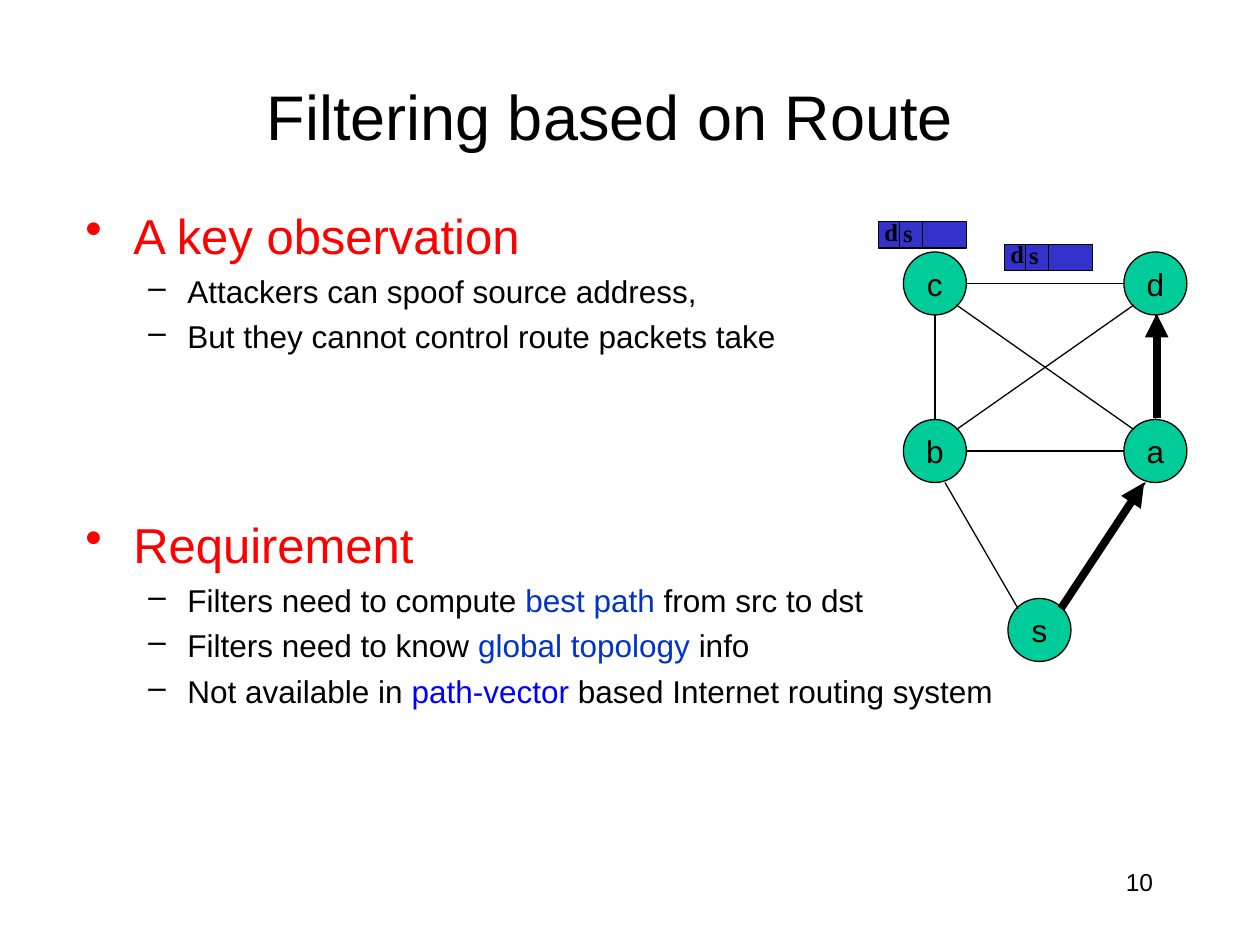
import pptx
import pptx.util
import pptx.dml.color
import pptx.enum.shapes
import pptx.enum.text
import pptx.oxml
import pptx.oxml.ns
from lxml import etree

Inches, Pt = pptx.util.Inches, pptx.util.Pt
RGBColor = pptx.dml.color.RGBColor
MSO_SHAPE = pptx.enum.shapes.MSO_SHAPE
ALIGN = pptx.enum.text.PP_ALIGN
ANCHOR = pptx.enum.text.MSO_ANCHOR
qn = pptx.oxml.ns.qn

BLACK = RGBColor(0x00, 0x00, 0x00)
RED = RGBColor(0xFF, 0x00, 0x00)
ROYAL = RGBColor(0x00, 0x33, 0xCC)
BLUE = RGBColor(0x00, 0x00, 0xFF)
GREEN = RGBColor(0x00, 0xCC, 0x99)
PACKET = RGBColor(0x33, 0x33, 0xCC)

# Outline: level, space before in points, runs
OUTLINE = [
    (0, 5.6, [("A key observation", RED)]),
    (1, 4.4, [("Attackers can spoof source address,", BLACK)]),
    (1, 4.4, [("But they cannot control route packets take", BLACK)]),
    (0, 91, [("Requirement", RED)]),
    (1, 4.4, [("Filters need to compute ", BLACK), ("best path ", ROYAL),
              ("from src to dst", BLACK)]),
    (1, 4.4, [("Filters need to know ", BLACK), ("global topology ", ROYAL),
              ("info", BLACK)]),
    (1, 4.4, [("Not available in ", BLACK), ("path-vector", BLUE),
              (" based Internet routing system", BLACK)]),
]
# Per level: size, bullet, left margin, first-line indent
LEVELS = [(28, "•", 0.38, -0.38), (18, "–", 0.81, -0.31)]

# Network: node centres, and links as (node, offset) pairs
R = 0.25
DIAG = 0.17
NODES = {"c": (7.42, 2.25), "d": (9.17, 2.25), "b": (7.42, 3.58),
         "a": (9.17, 3.58), "s": (8.25, 5)}
LINKS = [
    ("c", (R, 0), "d", (-R, 0)),
    ("c", (0, R), "b", (0, -R)),
    ("b", (R, 0), "a", (-R, 0)),
    ("d", (0, R), "a", (0, -R)),
    ("b", (0.08, R), "s", (-DIAG, -DIAG)),
    ("a", (-0.08, R), "s", (DIAG, -DIAG)),
    ("c", (DIAG, DIAG), "a", (-DIAG, -DIAG)),
    ("d", (-DIAG, DIAG), "b", (DIAG, -DIAG)),
]
ROUTE = [((8.42, 4.83), (9.08, 3.83)), ((9.18, 3.32), (9.18, 2.49))]
PACKETS = [(6.97, 1.76), (7.97, 1.94)]


def set_font(p, size, name="Arial", color=BLACK, bold=False):
    p.font.size = Pt(size)
    p.font.name = name
    p.font.color.rgb = color
    p.font.bold = bold


def add_text(shapes, box, text, size, align=ALIGN.LEFT, anchor=ANCHOR.TOP,
             wrap=True, **font):
    tf = shapes.add_textbox(*map(Inches, box)).text_frame
    tf.word_wrap = wrap
    tf.vertical_anchor = anchor
    p = tf.paragraphs[0]
    p.text = text
    p.alignment = align
    set_font(p, size, **font)


def add_filled(shapes, kind, box, fill):
    sp = shapes.add_shape(kind, *map(Inches, box))
    sp.shadow.inherit = False
    sp.fill.solid()
    sp.fill.fore_color.rgb = fill
    sp.line.color.rgb = BLACK
    sp.line.width = Pt(0.75)
    return sp


def add_line(shapes, start, end, width=0.75, arrow=False):
    line = shapes.add_connector(pptx.enum.shapes.MSO_CONNECTOR.STRAIGHT,
                                *map(Inches, (*start, *end)))
    line.line.color.rgb = BLACK
    line.line.width = Pt(width)
    if arrow:
        etree.SubElement(line.line._get_or_add_ln(), qn("a:tailEnd"),
                         type="triangle")
    etree.SubElement(line._element.spPr, qn("a:effectLst"))


def add_outline(shapes):
    tf = shapes.add_textbox(*map(Inches, (0.58, 1.58, 8.67, 5.08))).text_frame
    tf.word_wrap = True
    for i, (level, before, runs) in enumerate(OUTLINE):
        p = tf.add_paragraph() if i else tf.paragraphs[0]
        size, bullet, margin, indent = LEVELS[level]
        p.level = level
        p.space_before = Pt(before)
        set_font(p, size, color=runs[0][1])
        pPr = p._p.get_or_add_pPr()
        pPr.set("marL", str(Inches(margin)))
        pPr.set("indent", str(Inches(indent)))
        mark = etree.Element(qn("a:buChar"), char=bullet)
        pPr.find(qn("a:defRPr")).addprevious(mark)
        for text, color in runs:
            r = p.add_run()
            r.text = text
            r.font.color.rgb = color


def add_node(shapes, name, center):
    x, y = center
    sp = add_filled(shapes, MSO_SHAPE.OVAL, (x - R, y - R, 2 * R, 2 * R), GREEN)
    tf = sp.text_frame
    tf.word_wrap = False
    tf.vertical_anchor = ANCHOR.MIDDLE
    p = tf.paragraphs[0]
    p.text = name
    p.alignment = ALIGN.CENTER
    set_font(p, 18)


def link_end(node, offset):
    return tuple(c + d for c, d in zip(NODES[node], offset))


def add_packet(s, x, y):
    height = 0.21
    shapes = s.shapes.add_group_shape().shapes
    add_filled(shapes, MSO_SHAPE.RECTANGLE, (x, y, 0.7, height), PACKET)
    for dx in (0.17, 0.35):
        add_line(shapes, (x + dx, y), (x + dx, y + height))
    label = dict(size=14, name="Times New Roman", bold=True)
    add_text(shapes, (x - 0.05, y - 0.09, 0.26, 0.33), "d", **label)
    add_text(shapes, (x + 0.1, y - 0.08, 0.28, 0.33), "s", wrap=False, **label)


def main():
    prs = pptx.Presentation()
    prs.slide_width, prs.slide_height = Inches(10), Inches(7.5)
    s = prs.slides.add_slide(prs.slide_layouts[6])

    # Title and outline
    add_text(s.shapes, (0.59, 0.58, 8.5, 0.67), "Filtering based on Route", 36,
             ALIGN.CENTER, ANCHOR.MIDDLE)
    add_outline(s.shapes)

    # Network with the route from s to d
    for name, center in NODES.items():
        add_node(s.shapes, name, center)
    for start, start_offset, end, end_offset in LINKS:
        add_line(s.shapes, link_end(start, start_offset),
                 link_end(end, end_offset))
    for start, end in ROUTE:
        add_line(s.shapes, start, end, 4.5, arrow=True)

    # Packets
    for x, y in PACKETS:
        add_packet(s, x, y)

    # Slide number
    add_text(s.shapes, (7.17, 6.83, 2.08, 0.5), "10", 14, ALIGN.RIGHT)

    prs.save("out.pptx")


if __name__ == "__main__":
    main()
